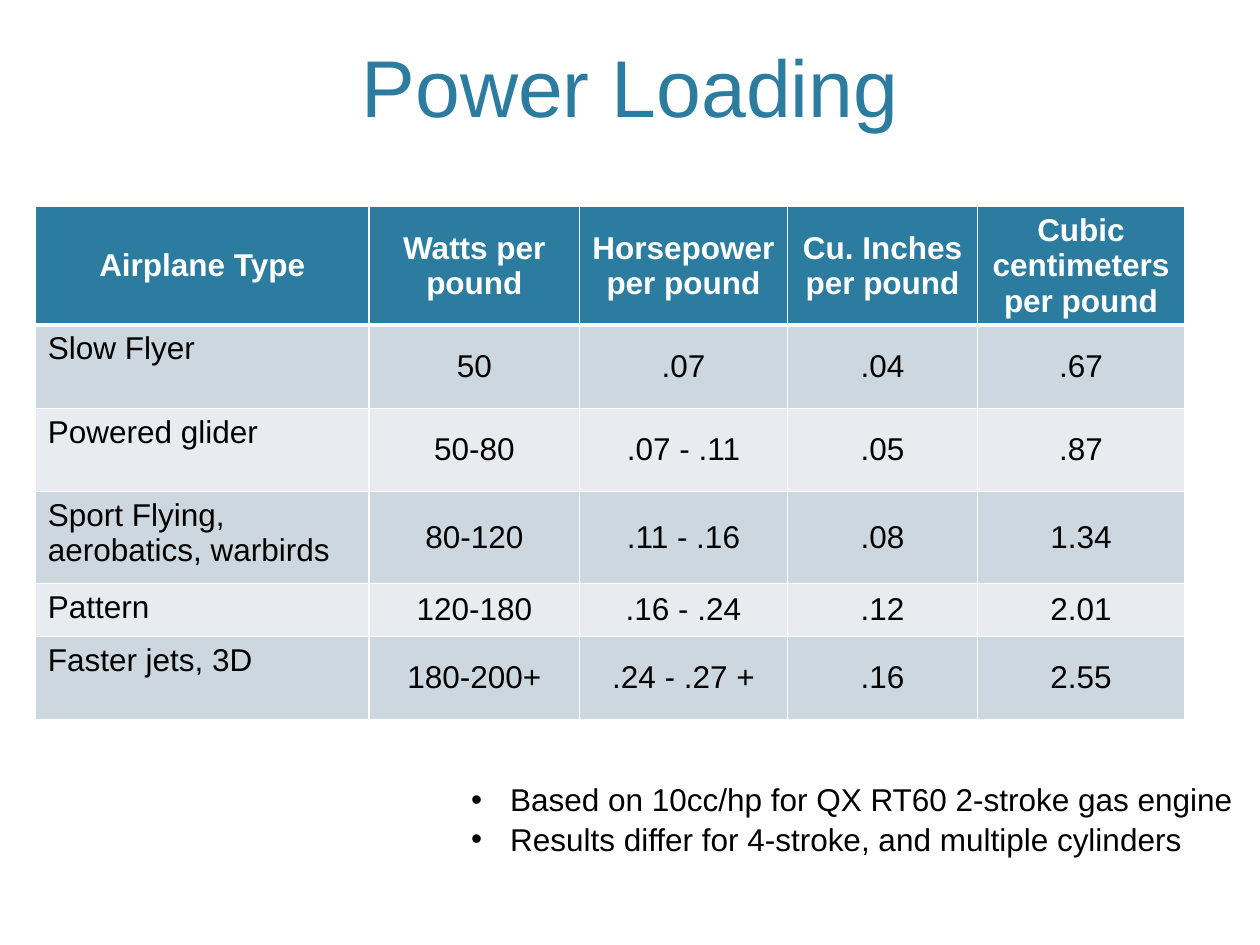
import pptx
import pptx.dml.color
import pptx.enum.text
import pptx.oxml
import pptx.oxml.ns
import pptx.util
from pptx.util import Inches

ANCHOR = pptx.enum.text.MSO_ANCHOR
ALIGN = pptx.enum.text.PP_ALIGN
TEAL, WHITE, BLACK = "2C7C9F", "FFFFFF", "000000"
BANDS = ["CDD7DF", "E8ECF0"]

COL_WIDTHS = [2.65, 1.67, 1.65, 1.51, 1.64]
ROW_HEIGHTS = [0.93, 0.66, 0.66, 0.73, 0.42, 0.66]
LOADINGS = [
    ["Airplane Type", "Watts per pound", "Horsepower per pound",
     "Cu. Inches per pound", "Cubic centimeters per pound"],
    ["Slow Flyer", "50", ".07", ".04", ".67"],
    ["Powered glider", "50-80", ".07 - .11", ".05", ".87"],
    ["Sport Flying, aerobatics, warbirds", "80-120", ".11 - .16", ".08", "1.34"],
    ["Pattern", "120-180", ".16 - .24", ".12", "2.01"],
    ["Faster jets, 3D", "180-200+", ".24 - .27 +", ".16", "2.55"],
]
NOTES = [
    "Based on 10cc/hp for QX RT60 2-stroke gas engine",
    "Results differ for 4-stroke, and multiple cylinders",
]


def rgb(color):
    return pptx.dml.color.RGBColor.from_string(color)


def format_paragraph(p, size, color, align=ALIGN.LEFT, bold=False):
    p.alignment = align
    for r in p.runs:
        r.font.name = "Arial"
        r.font.size = pptx.util.Pt(size)
        r.font.bold = bold
        r.font.color.rgb = rgb(color)


def set_borders(cell, bottom_width):
    """Draw white cell borders, 1 pt except for the bottom one."""
    tc_pr = cell._tc.get_or_add_tcPr()
    widths = {"lnL": 1, "lnR": 1, "lnT": 1, "lnB": bottom_width}
    for i, (tag, width) in enumerate(widths.items()):
        line = pptx.oxml.parse_xml(
            f'<a:{tag} {pptx.oxml.ns.nsdecls("a")} w="{pptx.util.Pt(width)}">'
            f'<a:solidFill><a:srgbClr val="{WHITE}"/></a:solidFill></a:{tag}>')
        tc_pr.insert(i, line)


def add_title(s, text):
    sp = s.shapes.title
    sp.left, sp.top = Inches(0.6), Inches(0.31)
    sp.width, sp.height = Inches(8.8), Inches(0.8)
    tf = sp.text_frame
    tf.text = text
    tf.vertical_anchor = ANCHOR.BOTTOM
    format_paragraph(tf.paragraphs[0], 46, TEAL, ALIGN.CENTER)


def fill_cell(cell, text, row, col):
    header = row == 0
    centered = header or col > 0
    cell.text = text
    cell.vertical_anchor = ANCHOR.MIDDLE if centered else ANCHOR.TOP
    cell.fill.solid()
    cell.fill.fore_color.rgb = rgb(TEAL if header else BANDS[(row - 1) % 2])
    format_paragraph(cell.text_frame.paragraphs[0], 18,
                     WHITE if header else BLACK,
                     ALIGN.CENTER if centered else ALIGN.LEFT, header)
    set_borders(cell, 3 if header else 1)


def add_loading_table(s):
    table = s.shapes.add_table(
        len(ROW_HEIGHTS), len(COL_WIDTHS), Inches(0.28), Inches(1.64),
        Inches(sum(COL_WIDTHS)), Inches(sum(ROW_HEIGHTS))).table
    for column, width in zip(table.columns, COL_WIDTHS):
        column.width = Inches(width)
    for row, height in zip(table.rows, ROW_HEIGHTS):
        row.height = Inches(height)
    for i, texts in enumerate(LOADINGS):
        for j, text in enumerate(texts):
            fill_cell(table.cell(i, j), text, i, j)


def add_bullet(p):
    p_pr = p._p.get_or_add_pPr()
    indent = Inches(0.31)
    p_pr.set("marL", str(indent))
    p_pr.set("indent", str(-indent))
    p_pr.append(pptx.oxml.parse_xml(
        f'<a:buFont {pptx.oxml.ns.nsdecls("a")} typeface="Arial"/>'))
    p_pr.append(pptx.oxml.parse_xml(
        f'<a:buChar {pptx.oxml.ns.nsdecls("a")} char="•"/>'))


def add_notes(s):
    tf = s.shapes.add_textbox(Inches(3.64), Inches(6.13),
                              Inches(6.32), Inches(1.01)).text_frame
    tf.word_wrap = True
    tf.text = "\n".join(NOTES)
    for p in tf.paragraphs:
        p.line_spacing = 1.05
        format_paragraph(p, 18, BLACK)
        add_bullet(p)


def main():
    prs = pptx.Presentation()
    prs.slide_width, prs.slide_height = Inches(10), Inches(7.5)
    s = prs.slides.add_slide(prs.slide_layouts[5])
    add_title(s, "Power Loading")
    add_loading_table(s)
    add_notes(s)
    prs.save("out.pptx")


if __name__ == "__main__":
    main()
